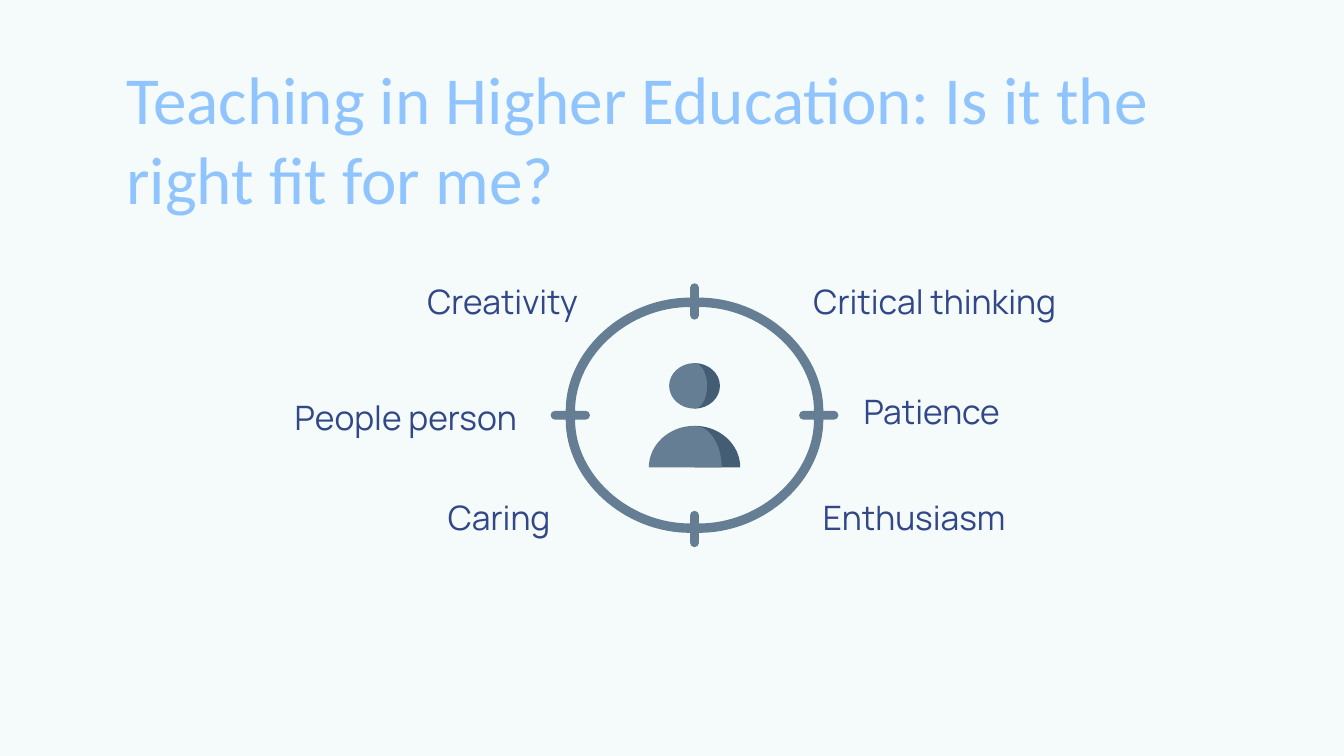
from dataclasses import dataclass

from lxml.etree import SubElement as Sub
from pptx import Presentation
from pptx.dml.color import RGBColor as Rgb
from pptx.enum.text import MSO_ANCHOR as Anchor, MSO_AUTO_SIZE as Fit, PP_ALIGN as Align
from pptx.oxml.ns import qn
from pptx.shapes.shapetree import GroupShapes as Group
from pptx.text.text import TextFrame as Frame
from pptx.util import Pt

Spot = tuple[float, float]
Loop = list[list[Spot]]

HUES = {
    "back": "F5FBFB",
    "title": "90C4FE",
    "label": "324788",
    "steel": "657E93",
    "shade": "435D74",
}


@dataclass
class Label:
    text: str
    left: float
    top: float
    width: float


@dataclass
class Dome:
    base: float
    left: float
    right: float
    height: float
    whole: bool
    hue: str


@dataclass
class Rim:
    tip: Spot
    ring: Spot
    cap: float


TOP_ROW, LOW_ROW = 143.3, 259.2
LABELS = [
    Label("Creativity", 221.8, TOP_ROW, 97.2),
    Label("Critical thinking", 428.7, TOP_ROW, 147.6),
    Label("People person", 150.8, 205.6, 137.5),
    Label("Patience", 455.6, 202.3, 97.2),
    Label("Caring", 232.9, LOW_ROW, 74.2),
    Label("Enthusiasm", 433.7, LOW_ROW, 137.5),
]

MID_X, MID_Y = 372.1, 222.5
BEND = 0.55
HALF = 2.4
TURNS = [(0, -1), (1, 0), (0, 1), (-1, 0)]
RIMS = [
    Rim((77.1, 70.7), (69, 63), -HALF),
    Rim((56, 51.2), (64, 58), HALF),
]
DOMES = [
    Dome(250.4, 0, 24.5, 22.3, False, "shade"),
    Dome(250.4, 24.5, 14.5, 22.3, False, "steel"),
    Dome(206.7, 0, 13.6, 12.2, True, "shade"),
    Dome(206.7, 13.6, 6.7, 12.2, True, "steel"),
]


def write(frame: Frame, text: str, font: str, size: float, hue: str) -> None:
    frame.word_wrap = True
    frame.auto_size = Fit.NONE
    frame.vertical_anchor = Anchor.TOP
    frame.margin_left = frame.margin_right = Pt(7.2)
    frame.margin_top = frame.margin_bottom = Pt(7.2)
    frame.text = text
    line = frame.paragraphs[0]
    line.alignment = Align.LEFT
    line.font.name = font
    line.font.size = Pt(size)
    line.font.color.rgb = Rgb.from_string(HUES[hue])


def draw(group: Group, loops: list[Loop], hue: str) -> None:
    ends = [(Pt(step[-1][0]), Pt(step[-1][1])) for loop in loops for step in loop]
    pen = group.build_freeform(*ends[0])
    pen.add_line_segments(ends[1:], close=True)
    shape = pen.convert_to_shape()
    shape.shadow.inherit = False
    shape.fill.solid()
    shape.fill.fore_color.rgb = Rgb.from_string(HUES[hue])
    shape.line.fill.background()

    track = next(shape._element.iter(qn("a:path")))
    for node in list(track):
        track.remove(node)
    for loop in loops:
        for rank, step in enumerate(loop):
            tag = "a:moveTo" if rank == 0 else "a:lnTo" if len(step) == 1 else "a:cubicBezTo"
            node = Sub(track, qn(tag))
            for x, y in step:
                Sub(node, qn("a:pt"), x=str(Pt(x) - shape.left), y=str(Pt(y) - shape.top))
        Sub(track, qn("a:close"))


def trace_dome(dome: Dome) -> Loop:
    def spot(x: float, y: float) -> Spot:
        reach = dome.right if x > 0 else dome.left
        return MID_X + reach * x, dome.base - dome.height * y

    def arc(a: Spot, b: Spot) -> list[Spot]:
        return [spot(a[0] + BEND * b[0], a[1] + BEND * b[1]),
                spot(b[0] + BEND * a[0], b[1] + BEND * a[1]), spot(*b)]

    left, top, right, low = (-1, 0), (0, 1), (1, 0), (0, -1)
    loop = [[spot(*left)], arc(left, top), arc(top, right)]
    if dome.whole:
        loop += [arc(right, low), arc(low, left)]
    return loop


def trace_rim(rim: Rim) -> Loop:
    loop: Loop = [[(MID_X, MID_Y - rim.tip[1])]]
    for rank, a in enumerate(TURNS):
        b = TURNS[(rank + 1) % 4]
        near, far = (1, 0) if rank % 2 == 0 else (0, 1)
        tip_a, tip_b = rim.tip[near], rim.tip[far]
        ring_a, ring_b = rim.ring[near], rim.ring[far]
        soft = rim.cap * (1 - BEND)

        def spot(p: float, q: float) -> Spot:
            return MID_X + a[0] * p + b[0] * q, MID_Y + a[1] * p + b[1] * q

        loop += [
            [spot(tip_a, HALF * BEND), spot(tip_a + soft, HALF), spot(tip_a + rim.cap, HALF)],
            [spot(ring_a, HALF)],
            [spot(ring_a, ring_b * BEND), spot(ring_a * BEND, ring_b), spot(HALF, ring_b)],
            [spot(HALF, tip_b + rim.cap)],
            [spot(HALF, tip_b + soft), spot(HALF * BEND, tip_b), spot(0, tip_b)],
        ]
    return loop


def main() -> None:
    deck = Presentation()
    deck.slide_width, deck.slide_height = Pt(720), Pt(405)
    slide = deck.slides.add_slide(deck.slide_layouts[5])
    slide.background.fill.solid()
    slide.background.fill.fore_color.rgb = Rgb.from_string(HUES["back"])

    title = slide.shapes.title
    title.left, title.top, title.width, title.height = Pt(60.6), Pt(23.3), Pt(598.3), Pt(95)
    write(title.text_frame, "Teaching in Higher Education: Is it the right fit for me?",
          "Calibri", 36, "title")

    group = slide.shapes.add_group_shape().shapes
    for dome in DOMES:
        draw(group, [trace_dome(dome)], dome.hue)
    draw(group, [trace_rim(rim) for rim in RIMS], "steel")

    for label in LABELS:
        box = slide.shapes.add_textbox(Pt(label.left), Pt(label.top), Pt(label.width), Pt(33.8))
        write(box.text_frame, label.text, "Manrope", 18, "label")

    deck.save("out.pptx")


if __name__ == "__main__":
    main()
